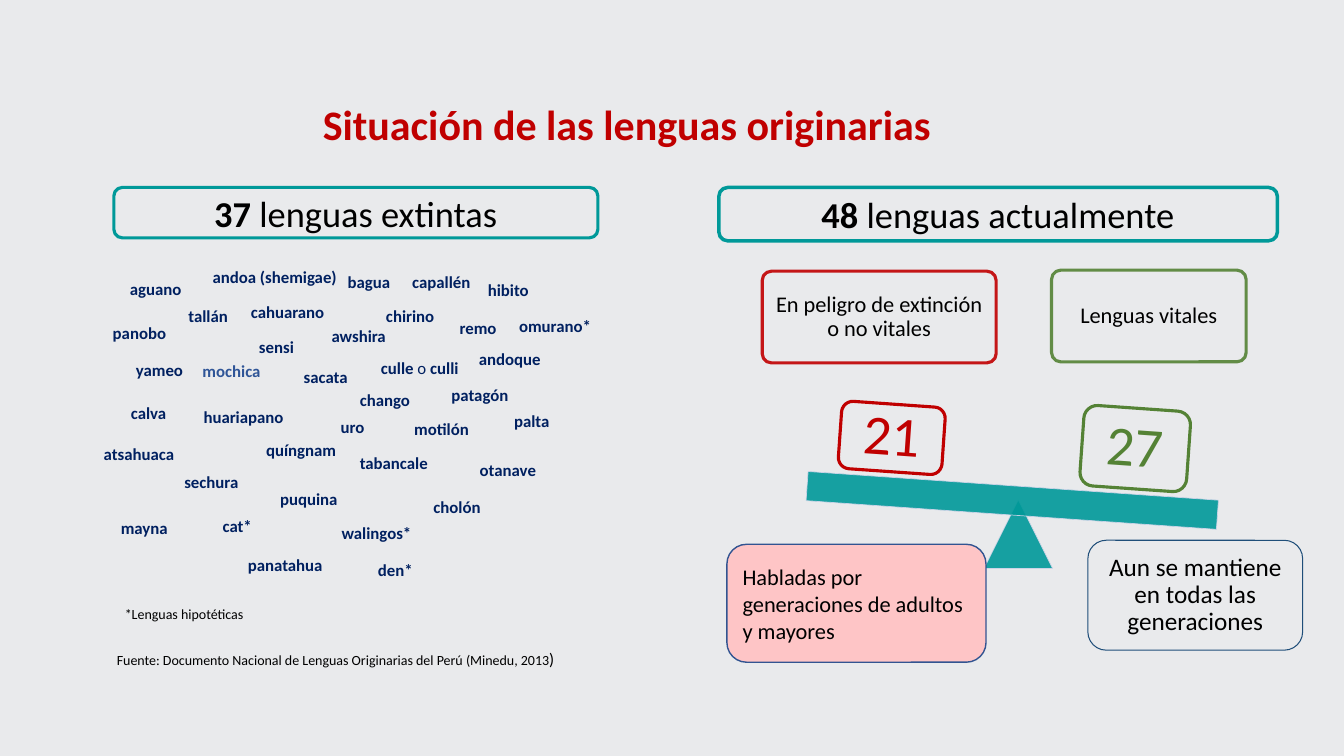
from dataclasses import dataclass

from lxml.etree import SubElement
from pptx import Presentation
from pptx.dml.color import RGBColor
from pptx.enum.shapes import MSO_SHAPE
from pptx.enum.text import MSO_ANCHOR, MSO_AUTO_SIZE, PP_ALIGN
from pptx.oxml.ns import qn
from pptx.util import Inches, Pt


@dataclass(frozen=True)
class Theme:
    """Colours, font and type sizes of the slide."""
    font: str = "Calibri"
    background: str = "E9EAEC"
    black: str = "000000"
    red: str = "C00000"
    green: str = "548235"
    teal: str = "009999"
    pale_line: str = "CFD5EA"
    navy: str = "002060"
    blue: str = "2F5597"
    vital_line: str = "1F4E79"
    elder_line: str = "325491"
    pink: str = "FEC5C6"
    title: int = 30
    heading: int = 26
    count: int = 40
    note: int = 18
    label: int = 16
    language: int = 12
    source: int = 10


THEME = Theme()

EXTINCT_LANGUAGES = [
    ("sacata", 2.56, 3.59, 1.34),
    ("culle o culli", 3.68, 3.5, 1.04),
    ("andoa (shemigae)", 2.01, 2.6, 1.55),
    ("andoque", 4.65, 3.41, 0.82),
    ("awshira", 3.19, 3.18, 0.75),
    ("aguano", 1.19, 2.72, 0.72),
    ("atsahuaca", 0.93, 4.35, 0.91),
    ("bagua", 3.35, 2.65, 0.63),
    ("capallén", 3.99, 2.65, 0.79),
    ("calva", 1.2, 3.95, 0.55),
    ("cat*", 2.11, 5.07, 0.49),
    ("cahuarano", 2.39, 2.94, 0.94),
    ("panobo", 1.02, 3.15, 0.74),
    ("hibito", 4.74, 2.73, 0.62),
    ("palta", 5, 4.03, 0.56),
    ("patagón", 4.38, 3.77, 0.77),
    ("puquina", 2.68, 4.8, 0.78),
    ("quíngnam", 2.54, 4.31, 0.91),
    ("remo", 4.46, 3.1, 0.57),
    ("walingos*", 3.29, 5.14, 0.91),
    ("yameo", 1.25, 3.52, 0.67),
    ("uro", 3.28, 4.09, 0.44),
    ("tallán", 1.77, 2.98, 0.88),
    ("tabancale", 3.47, 4.44, 0.88),
    ("sensi", 2.47, 3.29, 0.55),
    ("sechura", 1.73, 4.63, 0.74),
    ("huariapano", 1.92, 3.99, 1.01),
    ("panatahua", 2.36, 5.45, 0.95),
    ("otanave", 4.66, 4.51, 0.76),
    ("omurano*", 5.05, 3.08, 0.93),
    ("motilón", 4.01, 4.11, 0.75),
    ("mochica", 1.91, 3.53, 0.78),
    ("mayna", 1.1, 5.09, 0.67),
    ("den*", 3.65, 5.5, 0.55),
    ("cholón", 4.2, 4.88, 0.68),
    ("chirino", 3.73, 2.98, 0.69),
    ("chango", 3.47, 3.82, 0.71),
]
WRAPPED = {"sacata", "culle o culli", "andoa (shemigae)", "tallán"}


def style(paragraph, size, color=THEME.black, bold=False, align=PP_ALIGN.LEFT):
    """Set the font and alignment of a paragraph."""
    paragraph.alignment = align
    font = paragraph.font
    font.name, font.size, font.bold = THEME.font, Pt(size), bold
    font.color.rgb = RGBColor.from_string(color)


def add_title(slide, text):
    """Place and format the title placeholder."""
    title = slide.shapes.title
    title.left, title.top = Inches(2.11), Inches(0.93)
    title.width, title.height = Inches(8.22), Inches(0.61)
    frame = title.text_frame
    frame.text = text
    frame.vertical_anchor = MSO_ANCHOR.TOP
    frame.auto_size = MSO_AUTO_SIZE.NONE
    style(frame.paragraphs[0], THEME.title, THEME.red, True, PP_ALIGN.CENTER)


def add_figure(slide, kind, box, line, weight, fill=None, corner=None, rotation=0, opacity=None):
    """Add a preset shape with its outline and optional fill."""
    figure = slide.shapes.add_shape(kind, *map(Inches, box))
    figure.shadow.inherit = False
    figure.rotation = rotation
    if corner is not None:
        figure.adjustments[0] = corner
    if fill:
        figure.fill.solid()
        figure.fill.fore_color.rgb = RGBColor.from_string(fill)
    else:
        figure.fill.background()
    figure.line.color.rgb = RGBColor.from_string(line)
    figure.line.width = Pt(weight)
    if opacity is not None:
        for color in list(figure._element.spPr.iter(qn("a:srgbClr"))):
            SubElement(color, qn("a:alpha")).set("val", str(opacity * 1000))
    return figure


def add_card(slide, box, text, size, line, weight, color=THEME.black, inset=0.07,
             align=PP_ALIGN.CENTER, spacing=0.9, **look):
    """Add a rounded card with text centred vertically."""
    card = add_figure(slide, MSO_SHAPE.ROUNDED_RECTANGLE, box, line, weight, **look)
    frame = card.text_frame
    frame.margin_left = frame.margin_right = Inches(inset)
    frame.margin_top = frame.margin_bottom = Inches(inset)
    frame.vertical_anchor = MSO_ANCHOR.MIDDLE
    frame.word_wrap = True
    paragraph = frame.paragraphs[0]
    paragraph.add_run().text = text
    paragraph.line_spacing = spacing
    style(paragraph, size, color, align=align)


def add_heading(slide, box, count, text, weight):
    """Add a teal column heading that starts with a bold count."""
    heading = add_figure(slide, MSO_SHAPE.ROUNDED_RECTANGLE, box, THEME.teal, weight)
    heading.text_frame.vertical_anchor = MSO_ANCHOR.MIDDLE
    paragraph = heading.text_frame.paragraphs[0]
    style(paragraph, THEME.heading, align=PP_ALIGN.CENTER)
    number = paragraph.add_run()
    number.text, number.font.bold = count, True
    paragraph.add_run().text = f" {text}"


def add_text(slide, box, text, size, color=THEME.black, bold=False, wrap=False, align=PP_ALIGN.LEFT):
    """Add a one-line text box and return its paragraph."""
    frame = slide.shapes.add_textbox(*map(Inches, box)).text_frame
    frame.word_wrap = wrap
    frame.auto_size = MSO_AUTO_SIZE.SHAPE_TO_FIT_TEXT
    paragraph = frame.paragraphs[0]
    style(paragraph, size, color, bold, align)
    for index, part in enumerate(text.partition(" o ")):
        if part:
            run = paragraph.add_run()
            run.text = part
            if index == 1:
                run.font.bold = False
    return paragraph


def add_languages(slide):
    """Scatter the names of the extinct languages."""
    for language, left, top, width in EXTINCT_LANGUAGES:
        add_text(slide, (left, top, width, 0.3), language, THEME.language,
                 THEME.blue if language == "mochica" else THEME.navy, True,
                 language in WRAPPED,
                 PP_ALIGN.CENTER if language == "sacata" else PP_ALIGN.LEFT)


def add_balance(slide):
    """Draw the tilted balance with the two language counts."""
    for kind, box, tilt in [(MSO_SHAPE.ISOSCELES_TRIANGLE, (9.76, 4.96, 0.68, 0.68), 0),
                            (MSO_SHAPE.RECTANGLE, (8, 4.82, 4.08, 0.29), 4)]:
        add_figure(slide, kind, box, THEME.pale_line, 0.5, THEME.teal, rotation=tilt, opacity=90)
    for box, count, color in [((10.73, 4.05, 1.06, 0.8), "27", THEME.green),
                              ((8.33, 4.01, 1.03, 0.67), "21", THEME.red)]:
        add_card(slide, box, count, THEME.count, color, 2.25, color, inset=0.17, rotation=4)


def main():
    """Build the slide and save it."""
    deck = Presentation()
    deck.slide_width, deck.slide_height = Inches(13.33), Inches(7.5)
    slide = deck.slides.add_slide(deck.slide_layouts[5])
    slide.background.fill.solid()
    slide.background.fill.fore_color.rgb = RGBColor.from_string(THEME.background)

    add_title(slide, "Situación de las lenguas originarias")
    for box, text, color in [
        ((7.56, 2.69, 2.32, 0.91), "En peligro de extinción o no vitales", THEME.red),
        ((10.43, 2.68, 1.93, 0.91), "Lenguas vitales", THEME.green),
    ]:
        add_card(slide, box, text, THEME.label, color, 2.25, corner=0.1, opacity=90)
    add_balance(slide)
    add_card(slide, (10.79, 5.36, 2.13, 1.09), "Aun se mantiene en todas las generaciones",
             THEME.note, THEME.vital_line, 0.75)
    add_languages(slide)
    add_heading(slide, (1.13, 1.86, 4.8, 0.5), "37", "lenguas extintas", 2.25)
    add_heading(slide, (7.13, 1.86, 5.54, 0.53), "48", "lenguas actualmente", 2.5)
    source = add_text(slide, (1.06, 6.39, 4.61, 0.3),
                      "Fuente: Documento Nacional de Lenguas Originarias del Perú (Minedu, 2013",
                      THEME.source)
    bracket = source.add_run()
    bracket.text, bracket.font.size = ")", Pt(THEME.language)
    add_text(slide, (1.14, 5.96, 1.4, 0.27), "*Lenguas hipotéticas", THEME.source)
    add_card(slide, (7.21, 5.4, 2.57, 1.17), "Habladas por generaciones de adultos y mayores",
             THEME.label, THEME.elder_line, 1, inset=0.1, align=PP_ALIGN.LEFT,
             spacing=1.0, fill=THEME.pink)
    deck.save("out.pptx")


if __name__ == "__main__":
    main()
